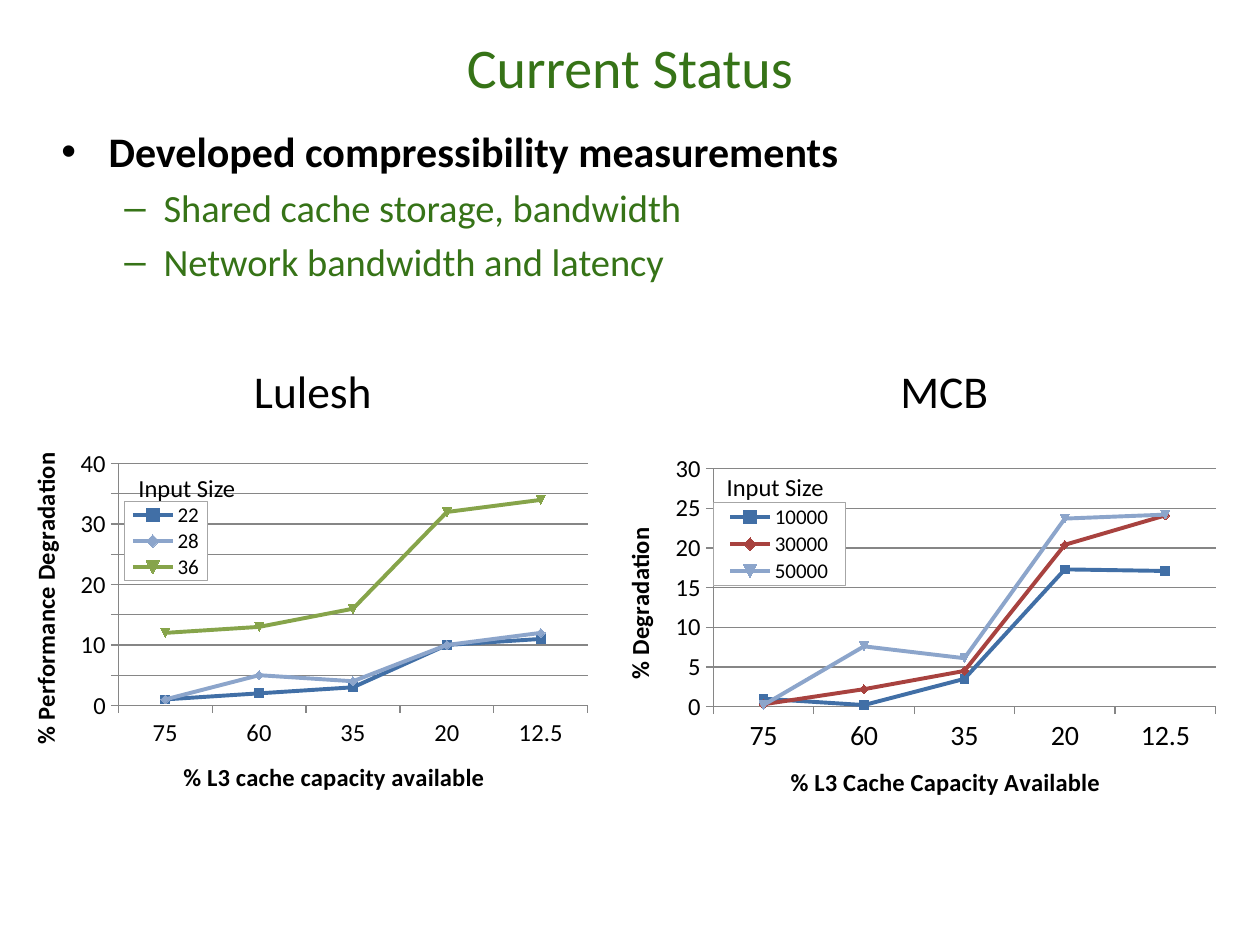
from lxml.etree import SubElement
from pptx import Presentation
from pptx.chart.data import CategoryChartData as ChartData
from pptx.dml.color import RGBColor
from pptx.enum.chart import XL_CHART_TYPE as Kind
from pptx.enum.chart import XL_LEGEND_POSITION as Side
from pptx.enum.chart import XL_TICK_MARK as Tick
from pptx.enum.text import MSO_ANCHOR as Anchor
from pptx.enum.text import PP_ALIGN as Align
from pptx.oxml import parse_xml
from pptx.oxml.ns import nsdecls, qn
from pptx.util import Cm, Pt

GREEN = RGBColor(0x36, 0x73, 0x17)
BLACK = RGBColor(0, 0, 0)
GREY = RGBColor(0x86, 0x86, 0x86)
BLUE = RGBColor(0x41, 0x6F, 0xA6)
PALE = RGBColor(0x8C, 0xA5, 0xCB)
RED = RGBColor(0xA8, 0x42, 0x3F)
OLIVE = RGBColor(0x86, 0xA4, 0x4A)
FACE = "Calibri"

CATS = ["75", "60", "35", "20", "12.5"]
LULESH = {
    "name": "Lulesh", "head": (4.76, -1.7, 2.9), "note": (2.43, 0.53, 2.49),
    "x": "% L3 cache capacity available", "y": "% Performance Degradation",
    "top": 40, "size": 14,
    "plot": (0.19, 0.06, 0.79, 0.64), "key": (0.2, 0.16, 0.14, 0.21),
    "rows": [
        ("22", BLUE, (1, 2, 3, 10, 11)),
        ("28", PALE, (1, 5, 4, 10, 12)),
        ("36", OLIVE, (12, 13, 16, 32, 34)),
    ],
}
MCB = {
    "name": "MCB", "head": (5.8, -1.8, 2.31), "note": (2.3, 0.39, 2.49),
    "x": "% L3 Cache Capacity Available", "y": "% Degradation",
    "top": 30, "size": 16,
    "plot": (0.18, 0.06, 0.8, 0.63), "key": (0.18, 0.15, 0.21, 0.22),
    "rows": [
        ("10000", BLUE, (1, 0.2, 3.5, 17.3, 17.1)),
        ("30000", RED, (0.3, 2.2, 4.5, 20.4, 24.1)),
        ("50000", PALE, (0.2, 7.6, 6.1, 23.7, 24.2)),
    ],
}
POINTS = [
    ("Developed compressibility measurements", 0, "•", 24, BLACK),
    ("Shared cache storage, bandwidth", 1, "–", 22, GREEN),
    ("Network bandwidth and latency", 1, "–", 22, GREEN),
]


def put(obj, **values):
    for key, value in values.items():
        setattr(obj, key, value)


def style(font, size, color=BLACK, bold=False):
    put(font, name=FACE, size=Pt(size), bold=bold)
    font.color.rgb = color


def label(slide, text, left, top, wide, size):
    box = slide.shapes.add_textbox(Cm(left), Cm(top), Cm(wide), Cm(size / 19))
    frame = box.text_frame
    frame.word_wrap = False
    frame.text = text
    style(frame.paragraphs[0].font, size)


def heading(slide, left, top, wide, high):
    title = slide.shapes.title
    put(title, left=Cm(left), top=Cm(top), width=Cm(wide), height=Cm(high))
    frame = title.text_frame
    frame.text = "Current Status"
    frame.vertical_anchor = Anchor.MIDDLE
    para = frame.paragraphs[0]
    para.alignment = Align.CENTER
    style(para.font, 32, GREEN)


def bullets(slide, left, top, wide, high):
    box = slide.shapes.add_textbox(Cm(left), Cm(top), Cm(wide), Cm(high))
    frame = box.text_frame
    frame.word_wrap = True
    indents = [(0.95, -0.95), (2.06, -0.79)]
    for i, (text, level, sign, size, color) in enumerate(POINTS):
        para = frame.add_paragraph() if i else frame.paragraphs[0]
        para.text = text
        props = para._p.get_or_add_pPr()
        margin, indent = indents[level]
        props.set("marL", str(Cm(margin)))
        props.set("indent", str(Cm(indent)))
        SubElement(props, qn("a:buFont"), typeface="Arial")
        SubElement(props, qn("a:buChar"), char=sign)
        para.level = level
        if i:
            para.space_before = Pt(size * 0.2)
        style(para.font, size, color, bold=level == 0)


def layout(box, inner=False):
    """Return a manual chart layout, in fractions of the chart."""
    target = '<c:layoutTarget val="inner"/>' if inner else ""
    sizes = "".join(f'<c:{k} val="{v}"/>' for k, v in zip("xywh", box))
    return parse_xml(
        f'<c:layout {nsdecls("c")}><c:manualLayout>{target}'
        f'<c:xMode val="edge"/><c:yMode val="edge"/>{sizes}'
        "</c:manualLayout></c:layout>")


def drop(node):
    """Remove any layout the node already has."""
    for old in node.findall(qn("c:layout")):
        node.remove(old)


def dress(axis, text, size, turn):
    put(axis, has_title=True, major_tick_mark=Tick.OUTSIDE,
        minor_tick_mark=Tick.NONE)
    style(axis.tick_labels.font, size)
    axis.format.line.color.rgb = GREY
    title = axis.axis_title
    title.text_frame.text = text
    style(title.text_frame.paragraphs[0].runs[0].font, 14, bold=True)
    body = title._element.find(".//" + qn("a:bodyPr"))
    body.set("rot", str(turn))
    body.set("vert", "horz")


def legend(chart, box):
    chart.has_legend = True
    key = chart.legend
    put(key, position=Side.CORNER, include_in_layout=True)
    style(key.font, 12)
    node = key._element
    drop(node)
    node.find(qn("c:legendPos")).addnext(layout(box))
    node.find(qn("c:overlay")).addnext(parse_xml(
        f'<c:spPr {nsdecls("c", "a")}>'
        '<a:solidFill><a:srgbClr val="FFFFFF"/></a:solidFill>'
        '<a:ln w="6350"><a:solidFill><a:srgbClr val="A6A6A6"/>'
        "</a:solidFill></a:ln></c:spPr>"))


def panel(slide, part, left, top, wide, high):
    """Place a line chart with its heading and legend caption."""
    data = ChartData()
    data.categories = CATS
    for name, _, values in part["rows"]:
        data.add_series(name, values)
    chart = slide.shapes.add_chart(
        Kind.LINE_MARKERS, Cm(left), Cm(top), Cm(wide), Cm(high), data).chart
    chart.has_title = False
    style(chart.font, 10)
    plot = chart.plots[0]
    plot.vary_by_categories = False
    for line, (_, color, _) in zip(plot.series, part["rows"]):
        line.smooth = False
        line.format.line.width = Pt(2.25)
        line.format.line.color.rgb = color
        line.marker.size = 5
        form = line.marker.format
        form.fill.solid()
        form.fill.fore_color.rgb = color
        form.line.color.rgb = color

    dress(chart.category_axis, part["x"], part["size"], 0)
    axis = chart.value_axis
    dress(axis, part["y"], 14, -5400000)
    put(axis, minimum_scale=0, maximum_scale=part["top"], major_unit=5,
        has_major_gridlines=True)
    axis.major_gridlines.format.line.color.rgb = GREY
    put(axis.tick_labels, number_format="0", number_format_is_linked=False)
    area = chart._chartSpace.chart.plotArea
    drop(area)
    area.insert(0, layout(part["plot"], inner=True))
    legend(chart, part["key"])

    captions = [(part["name"], part["head"], 26),
                ("Input Size", part["note"], 14)]
    for text, (dx, dy, span), size in captions:
        label(slide, text, left + dx, top + dy, span, size)


def main():
    deck = Presentation()
    put(deck, slide_width=Cm(25.4), slide_height=Cm(19.05))
    slide = deck.slides.add_slide(deck.slide_layouts[5])
    heading(slide, 0, 0, 25.4, 2.67)
    bullets(slide, 0.99, 2.41, 23.37, 14.6)
    panel(slide, LULESH, 0.11, 8.89, 11.98, 7.62)
    panel(slide, MCB, 12.1, 8.99, 12.66, 7.62)
    deck.save("out.pptx")


if __name__ == "__main__":
    main()
